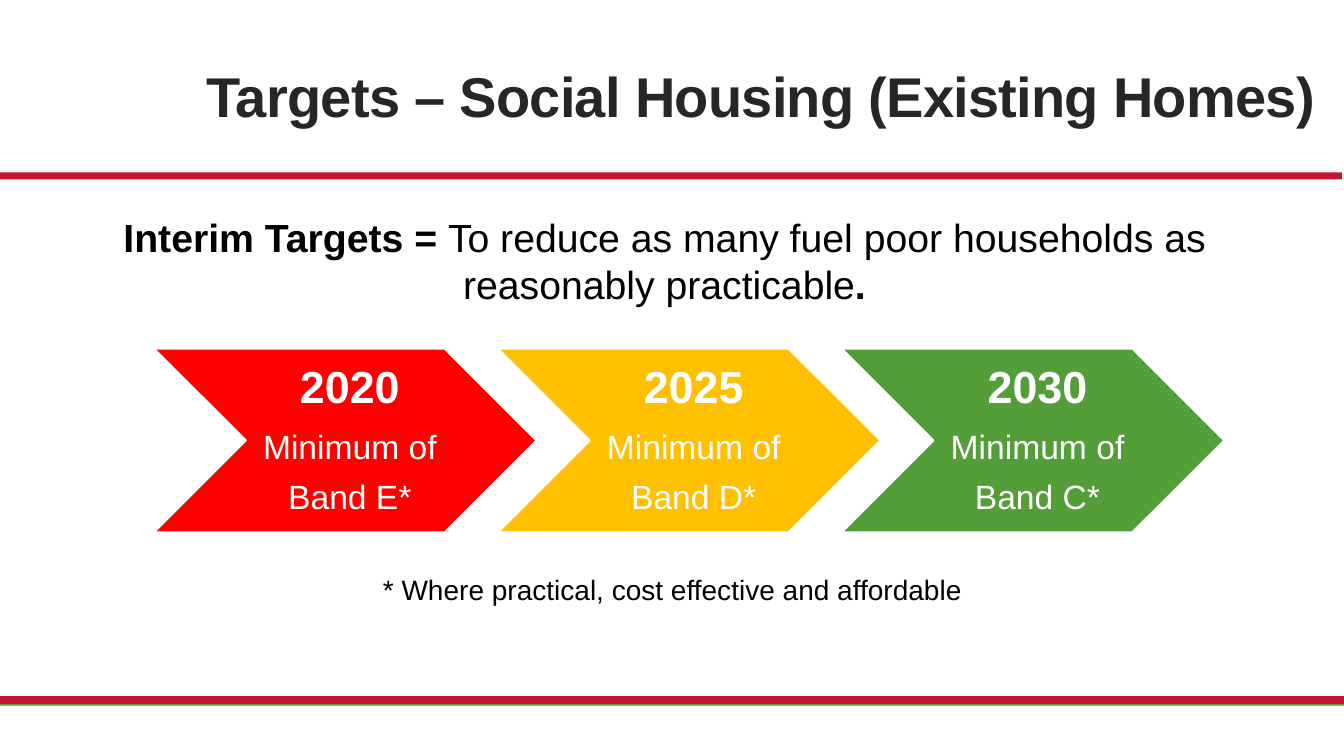
import pptx
import pptx.dml.color
import pptx.enum.shapes
import pptx.enum.text
import pptx.util
from pptx.util import Inches, Pt

SHAPE = pptx.enum.shapes.MSO_SHAPE
ALIGN = pptx.enum.text.PP_ALIGN
ANCHOR = pptx.enum.text.MSO_ANCHOR
AUTO_SIZE = pptx.enum.text.MSO_AUTO_SIZE

WHITE, BLACK, DARK = "FFFFFF", "000000", "262626"
CRIMSON, RED, AMBER, GREEN = "C51230", "FF0000", "FFC000", "549E39"
TARGETS = [
    ("2020", "Band E*", RED),
    ("2025", "Band D*", AMBER),
    ("2030", "Band C*", GREEN),
]


def rgb(color):
    return pptx.dml.color.RGBColor.from_string(color)


def add_run(p, text, size, color, bold=False):
    r = p.add_run()
    r.text = text
    r.font.name = "Arial"
    r.font.size = Pt(size)
    r.font.bold = bold
    r.font.color.rgb = rgb(color)
    return r


def add_filled(s, kind, left, top, width, height, fill, line=None):
    sp = s.shapes.add_shape(kind, Inches(left), Inches(top), Inches(width), Inches(height))
    sp.shadow.inherit = False
    sp.fill.solid()
    sp.fill.fore_color.rgb = rgb(fill)
    if line:
        sp.line.color.rgb = rgb(line)
        sp.line.width = Pt(1.25)
    else:
        sp.line.fill.background()
    return sp


def set_title(s, text):
    sp = s.shapes.title
    sp.left, sp.top = Inches(1.95), Inches(0.32)
    sp.width, sp.height = Inches(11.24), Inches(1.01)
    tf = sp.text_frame
    tf.auto_size = AUTO_SIZE.NONE
    tf.word_wrap = True
    tf.vertical_anchor = ANCHOR.BOTTOM
    p = tf.paragraphs[0]
    p.alignment = ALIGN.LEFT
    p.line_spacing = 0.85
    r = add_run(p, text, 40, DARK, bold=True)
    r.font._element.set("spc", "-50")


def add_centred_text(s, left, top, height, size, runs):
    """Add a one-paragraph box from (text, bold) pairs."""
    sp = s.shapes.add_textbox(Inches(left), Inches(top), Inches(12.18), Inches(height))
    tf = sp.text_frame
    tf.word_wrap = True
    p = tf.paragraphs[0]
    p.alignment = ALIGN.CENTER
    for text, bold in runs:
        add_run(p, text, size, BLACK, bold)


def add_target(s, left, year, band, color):
    sp = add_filled(s, SHAPE.CHEVRON, left, 3.46, 3.79, 1.82, color, WHITE)
    tf = sp.text_frame
    tf.word_wrap = True
    tf.vertical_anchor = ANCHOR.MIDDLE
    tf.margin_left = Inches(0.14)
    tf.margin_top = tf.margin_right = tf.margin_bottom = Inches(0.05)
    lines = [(year, 32, True), ("Minimum of", 24, False), (band, 24, False)]
    for i, (text, size, bold) in enumerate(lines):
        p = tf.add_paragraph() if i else tf.paragraphs[0]
        p.alignment = ALIGN.CENTER
        p.line_spacing = 0.9
        p.space_after = Pt(0.4 * size)
        add_run(p, text, size, WHITE, bold)


def main():
    prs = pptx.Presentation()
    prs.slide_width, prs.slide_height = Inches(13.33), Inches(7.5)
    s = prs.slides.add_slide(prs.slide_layouts[5])

    add_filled(s, SHAPE.RECTANGLE, 0, 6.93, 13.33, 0.07, GREEN)
    add_filled(s, SHAPE.RECTANGLE, 0, 6.91, 13.33, 0.07, CRIMSON, CRIMSON)
    add_filled(s, SHAPE.RECTANGLE, -0.02, 1.71, 13.33, 0.07, CRIMSON)

    set_title(s, "Targets – Social Housing (Existing Homes)")
    add_centred_text(s, 0.5, 2.07, 1.04, 28, [
        ("Interim Targets = ", True),
        ("To reduce as many fuel poor households as reasonably practicable", False),
        (".", True),
    ])
    for i, (year, band, color) in enumerate(TARGETS):
        add_target(s, 1.53 + 3.41 * i, year, band, color)
    add_centred_text(s, 0.58, 5.63, 0.44, 20, [
        ("* Where practical, cost effective and affordable", False),
    ])

    prs.save("out.pptx")


if __name__ == "__main__":
    main()
